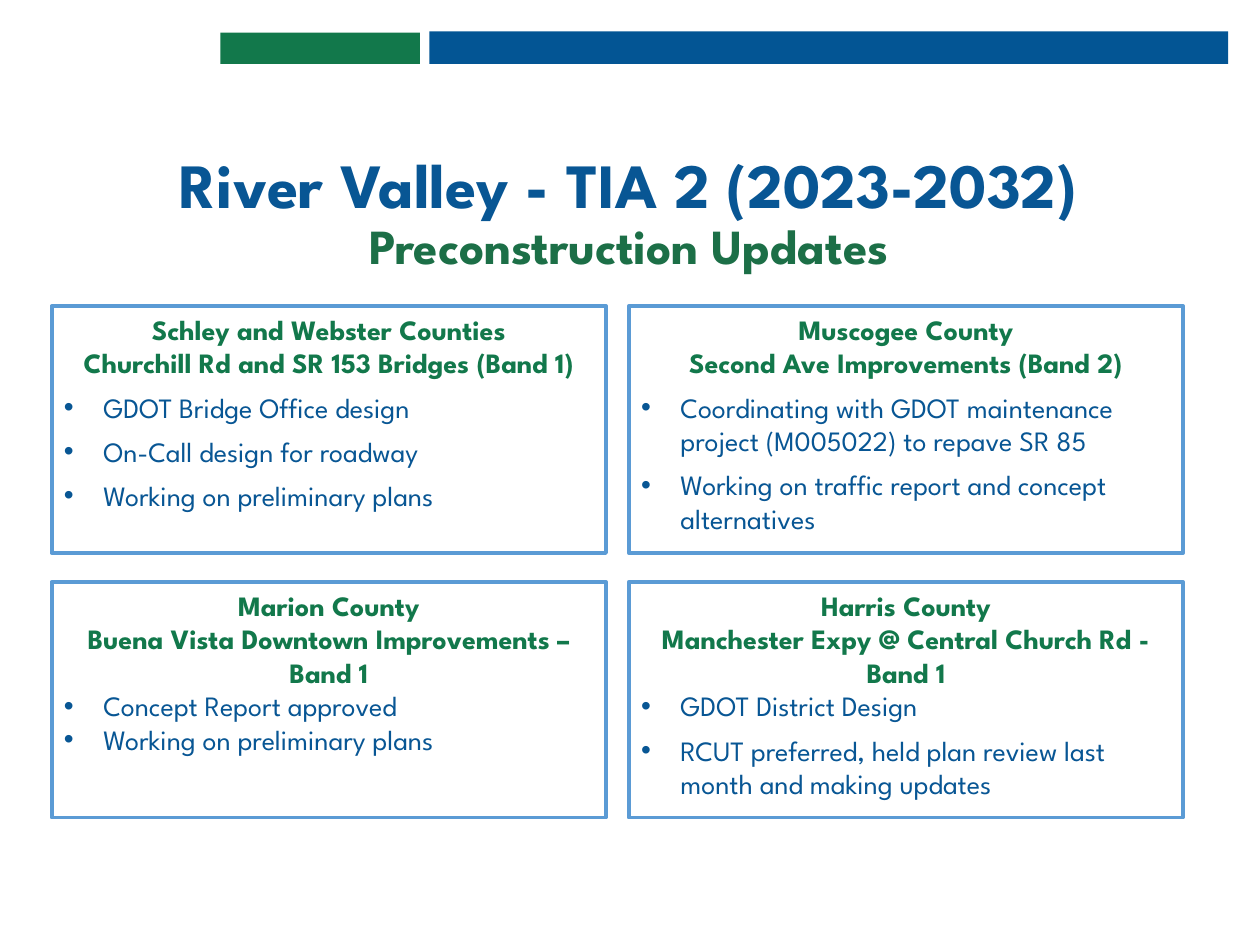
from dataclasses import dataclass

from lxml import etree
from pptx import Presentation
from pptx.dml.color import RGBColor
from pptx.enum.shapes import MSO_SHAPE
from pptx.enum.text import MSO_ANCHOR, MSO_AUTO_SIZE, PP_ALIGN
from pptx.oxml.ns import qn
from pptx.util import Pt

RECTANGLE = MSO_SHAPE.RECTANGLE
TOP, BOTTOM = MSO_ANCHOR.TOP, MSO_ANCHOR.BOTTOM
NO_AUTOFIT = MSO_AUTO_SIZE.NONE
LEFT, CENTER = PP_ALIGN.LEFT, PP_ALIGN.CENTER


@dataclass(frozen=True)
class Theme:
    font: str = "League Spartan"
    bar_blue: str = "035594"
    text_blue: str = "085694"
    green: str = "12784B"
    subtitle_green: str = "1C6F47"
    border: str = "5B9BD5"
    white: str = "FFFFFF"
    title_size: int = 36
    subtitle_size: int = 28
    body_size: int = 16
    border_width: float = 2.25
    bullet_indent: float = 22.5


def add_text(paragraph, text, *, font, size, color, bold=False):
    run = paragraph.add_run()
    run.text = text
    run.font.name = font
    run.font.size = Pt(size)
    run.font.bold = bold
    run.font.color.rgb = RGBColor.from_string(color)


class SlideBuilder:
    def __init__(self, slide, theme):
        self.slide = slide
        self.theme = theme

    def rectangle(self, bounds, fill, border=None):
        shape = self.slide.shapes.add_shape(RECTANGLE, *map(Pt, bounds))
        shape.shadow.inherit = False
        shape.fill.solid()
        shape.fill.fore_color.rgb = RGBColor.from_string(fill)
        if border:
            shape.line.color.rgb = RGBColor.from_string(border)
            shape.line.width = Pt(self.theme.border_width)
        else:
            shape.line.fill.background()
        return shape

    def title(self, bounds, heading, subtitle):
        theme = self.theme
        title = self.slide.shapes.title
        title.left, title.top, title.width, title.height = map(Pt, bounds)
        frame = title.text_frame
        frame.word_wrap = True
        frame.auto_size = NO_AUTOFIT
        frame.vertical_anchor = BOTTOM
        paragraph = frame.paragraphs[0]
        paragraph.alignment = CENTER
        paragraph.line_spacing = 0.9
        add_text(paragraph, heading, font=theme.font, size=theme.title_size,
                 color=theme.text_blue, bold=True)
        # The break carries the heading size so the first line keeps its height
        paragraph.add_line_break()
        etree.SubElement(paragraph._p[-1], qn("a:rPr"),
                         sz=str(theme.title_size * 100))
        add_text(paragraph, subtitle, font=theme.font, size=theme.subtitle_size,
                 color=theme.subtitle_green, bold=True)

    def bullet(self, paragraph):
        indent = Pt(self.theme.bullet_indent)
        properties = paragraph._p.get_or_add_pPr()
        properties.set("marL", str(indent))
        properties.set("indent", str(-indent))
        etree.SubElement(properties, qn("a:buFont"), typeface="Arial")
        etree.SubElement(properties, qn("a:buChar"), char="•")

    def project_card(self, bounds, headings, updates):
        """Updates are pairs of text and space before, in points."""
        theme = self.theme
        card = self.rectangle(bounds, theme.white, theme.border)
        frame = card.text_frame
        frame.word_wrap = True
        frame.vertical_anchor = TOP
        for number, heading in enumerate(headings):
            paragraph = frame.add_paragraph() if number else frame.paragraphs[0]
            paragraph.alignment = CENTER
            add_text(paragraph, heading, font=theme.font, size=theme.body_size,
                     color=theme.green, bold=True)
        for update, space_before in updates:
            paragraph = frame.add_paragraph()
            paragraph.alignment = LEFT
            paragraph.space_before = Pt(space_before)
            self.bullet(paragraph)
            add_text(paragraph, update, font=theme.font, size=theme.body_size,
                     color=theme.text_blue)


# Card grid: two columns, two rows
COLUMN_LEFTS = (29.5, 359.3)
CARD_WIDTH = 316.8
ROWS = ((175, 141), (332.6, 134.6))  # top and height

PROJECTS = (
    (
        (("Schley and Webster Counties",
          "Churchill Rd and SR 153 Bridges (Band 1)"),
         (("GDOT Bridge Office design", 6),
          ("On-Call design for roadway", 6),
          ("Working on preliminary plans", 6))),
        (("Muscogee County", "Second Ave Improvements (Band 2)"),
         (("Coordinating with GDOT maintenance project (M005022) "
           "to repave SR 85", 6),
          ("Working on traffic report and concept alternatives", 6))),
    ),
    (
        (("Marion County", "Buena Vista Downtown Improvements –", "Band 1"),
         (("Concept Report approved", 0),
          ("Working on preliminary plans", 0))),
        (("Harris County", "Manchester Expy @ Central Church Rd -", "Band 1"),
         (("GDOT District Design", 0),
          ("RCUT preferred, held plan review last month and making updates",
           6))),
    ),
)


def main():
    presentation = Presentation()
    presentation.slide_width, presentation.slide_height = Pt(720), Pt(540)
    title_only = presentation.slide_layouts[5]
    theme = Theme()
    builder = SlideBuilder(presentation.slides.add_slide(title_only), theme)

    # Header bars
    builder.rectangle((245.4, 18, 456.4, 18.6), theme.bar_blue)
    builder.rectangle((126, 18.6, 114, 18), theme.green)

    # Title
    builder.title((70.6, 80, 577.4, 80.6),
                  "River Valley - TIA 2 (2023-2032)", "Preconstruction Updates")

    # Project cards
    for (top, height), projects in zip(ROWS, PROJECTS):
        for left, (headings, updates) in zip(COLUMN_LEFTS, projects):
            builder.project_card((left, top, CARD_WIDTH, height),
                                 headings, updates)

    presentation.save("out.pptx")


if __name__ == "__main__":
    main()
